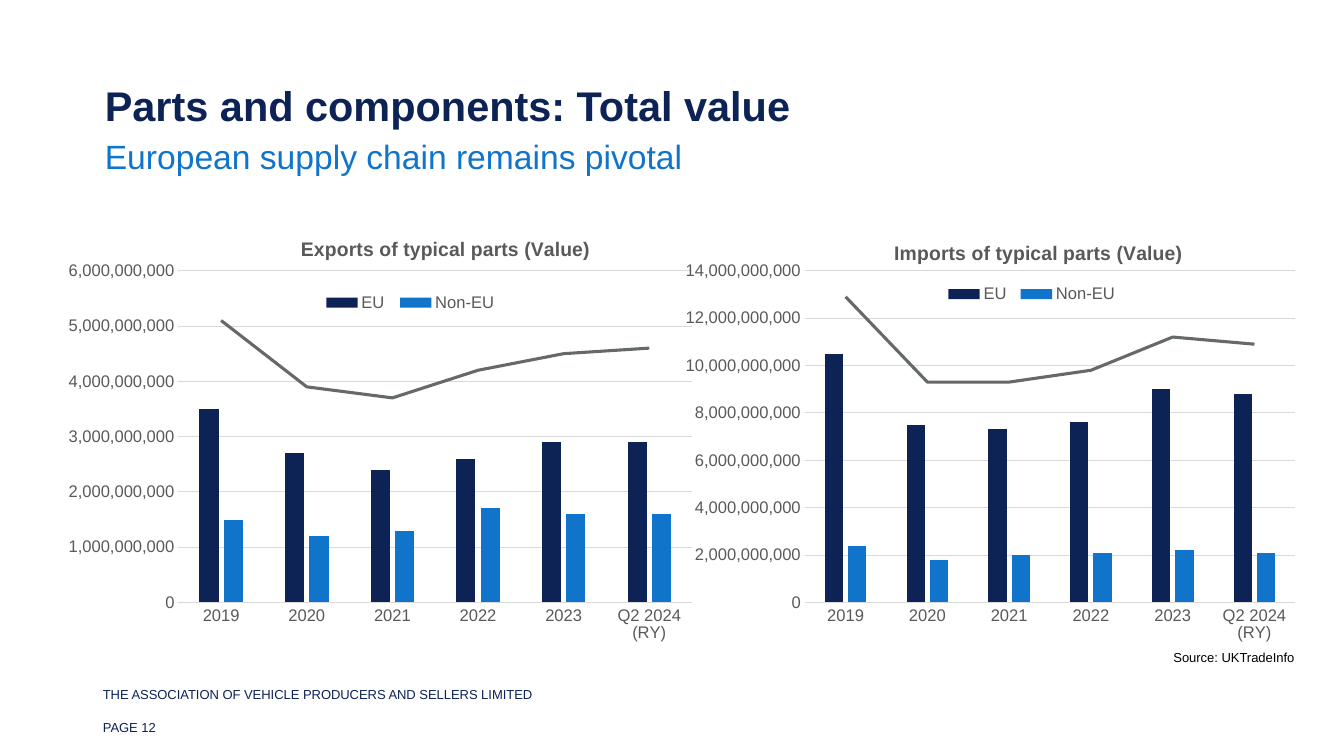
from pptx import Presentation
from pptx.chart import data
from pptx.dml.color import RGBColor
from pptx.enum import chart as ch
from pptx.oxml import parse_xml
from pptx.oxml.ns import nsdecls, qn
from pptx.util import Inches, Pt

NAVY, BLUE, GREY, LABEL, GRID = "0D2255", "1074CB", "666969", "595959", "D9D9D9"
YEARS = ["2019", "2020", "2021", "2022", "2023", "Q2 2024 (RY)"]
BILLION = 10 ** 9


def color(value):
    return RGBColor.from_string(value)


def element(tag, body=""):
    return parse_xml(f"<c:{tag} {nsdecls('c')}>{body}</c:{tag}>")


def drop(parent, tag):
    for child in parent.findall(qn(f"c:{tag}")):
        parent.remove(child)


def place(parent, before, **layout):
    drop(parent, "layout")
    target = '<c:layoutTarget val="inner"/>' if before == "barChart" else ""
    modes = '<c:xMode val="edge"/><c:yMode val="edge"/>'
    sizes = "".join(f'<c:{key} val="{value}"/>' for key, value in layout.items())
    manual = f"<c:manualLayout>{target}{modes}{sizes}</c:manualLayout>"
    parent.find(qn(f"c:{before}")).addprevious(element("layout", manual))


class Deck:
    font = "Arial"

    def __init__(self):
        self.prs = Presentation()
        self.prs.slide_width, self.prs.slide_height = Inches(13.33), Inches(7.5)
        self.slide = self.prs.slides.add_slide(self.prs.slide_layouts[6])

    def style(self, font, size, ink, bold=False):
        font.name, font.size, font.bold = self.font, Pt(size), bold
        font.color.rgb = color(ink)

    def text(self, words, box, size, ink, bold=False, inset=(0.1, 0.05)):
        frame = self.slide.shapes.add_textbox(*map(Inches, box)).text_frame
        frame.word_wrap = True
        frame.margin_left = frame.margin_right = Inches(inset[0])
        frame.margin_top = frame.margin_bottom = Inches(inset[1])
        frame.text = words
        self.style(frame.paragraphs[0].font, size, ink, bold)

    def axes(self, chart, top, step):
        for axis in (chart.category_axis, chart.value_axis):
            axis.major_tick_mark = axis.minor_tick_mark = ch.XL_TICK_MARK.NONE
            self.style(axis.tick_labels.font, 12, LABEL)
        years, value = chart.category_axis, chart.value_axis
        value.minimum_scale, value.maximum_scale = 0, top * BILLION
        value.major_unit = step * BILLION
        value.tick_labels.number_format = "#,##0"
        value.tick_labels.number_format_is_linked = False
        value.format.line.fill.background()
        for line in (years.format.line, value.major_gridlines.format.line):
            line.color.rgb, line.width = color(GRID), Pt(0.75)

    def total_line(self, chart):
        bars = chart.plots[0]
        total = bars.series[2]._element
        drop(total, "invertIfNegative")
        lines = element("lineChart", '<c:grouping val="standard"/><c:varyColors val="0"/>')
        lines.append(total)
        lines.append(element("marker"))
        lines[-1].set("val", "1")
        for axis in bars._element.findall(qn("c:axId")):
            lines.append(element("axId"))
            lines[-1].set("val", axis.get("val"))
        bars._element.addnext(lines)
        series = chart.plots[1].series[0]
        series.smooth = False
        series.marker.style = ch.XL_MARKER_STYLE.NONE
        series.format.line.color.rgb = color(GREY)
        series.format.line.width = Pt(2.25)

    def trade_chart(self, title, left, width, values, top, step, plot, title_at, legend_at):
        trade = data.CategoryChartData(number_format="#,##0")
        trade.categories = YEARS
        for name, billions in zip(("EU", "Non-EU", "total"), values):
            trade.add_series(name, [round(b * BILLION) for b in billions])
        chart = self.slide.shapes.add_chart(
            ch.XL_CHART_TYPE.COLUMN_CLUSTERED, Inches(left), Inches(2.18),
            Inches(width), Inches(4.22), trade).chart
        self.style(chart.font, 10, "000000")

        chart.has_title = True
        chart.chart_title.text_frame.text = title
        self.style(chart.chart_title.text_frame.paragraphs[0].font, 14, LABEL, True)
        place(chart.chart_title._element, "overlay", x=title_at[0], y=title_at[1])

        chart.has_legend = True
        legend = chart.legend
        legend.position = ch.XL_LEGEND_POSITION.BOTTOM
        legend.include_in_layout = False
        self.style(legend.font, 12, LABEL)
        place(legend._element, "overlay", x=legend_at[0], y=legend_at[1], w=0.3, h=0.07)
        legend._element.find(qn("c:layout")).addprevious(
            element("legendEntry", '<c:idx val="2"/><c:delete val="1"/>'))

        self.axes(chart, top, step)
        bars = chart.plots[0]
        bars.gap_width, bars.overlap, bars.vary_by_categories = 219, -27, False
        for series, ink in zip(bars.series, (NAVY, BLUE)):
            series.format.fill.solid()
            series.format.fill.fore_color.rgb = color(ink)
        self.total_line(chart)
        place(chart._chartSpace.chart.plotArea, "barChart",
              x=plot[0], y=0.12, w=plot[1], h=0.78)


def main():
    deck = Deck()
    heading, footer = (0.07, 0.04), (0.13, 0.07)
    deck.text("Parts and components: Total value", (0.97, 0.75, 11.36, 0.55),
              29.6, NAVY, True, heading)
    deck.text("European supply chain remains pivotal", (0.97, 1.31, 11.36, 0.55),
              24, BLUE, inset=heading)

    exports = [(3.5, 2.7, 2.4, 2.6, 2.9, 2.9),
               (1.5, 1.2, 1.3, 1.7, 1.6, 1.6),
               (5.1, 3.9, 3.7, 4.2, 4.5, 4.6)]
    imports = [(10.5, 7.5, 7.3, 7.6, 9.0, 8.8),
               (2.4, 1.8, 2.0, 2.1, 2.2, 2.1),
               (12.9, 9.3, 9.3, 9.8, 11.2, 10.9)]
    deck.trade_chart("Exports of typical parts (Value)", 0.68, 6.31, exports, 6, 1,
                     plot=(0.16, 0.82), title_at=(0.35, 0.03), legend_at=(0.38, 0.16))
    deck.trade_chart("Imports of typical parts (Value)", 6.8, 6.17, imports, 14, 2,
                     plot=(0.18, 0.8), title_at=(0.32, 0.04), legend_at=(0.4, 0.14))

    deck.text("Source: UKTradeInfo", (11.54, 6.39, 1.57, 0.35), 9.3, "000000")
    deck.text("THE ASSOCIATION OF VEHICLE PRODUCERS AND SELLERS LIMITED",
              (0.89, 6.74, 6.74, 0.29), 9.3, NAVY, inset=footer)
    deck.text("PAGE 12", (0.89, 7.07, 1.11, 0.29), 9.3, NAVY, inset=footer)
    deck.prs.save("out.pptx")


if __name__ == "__main__":
    main()
